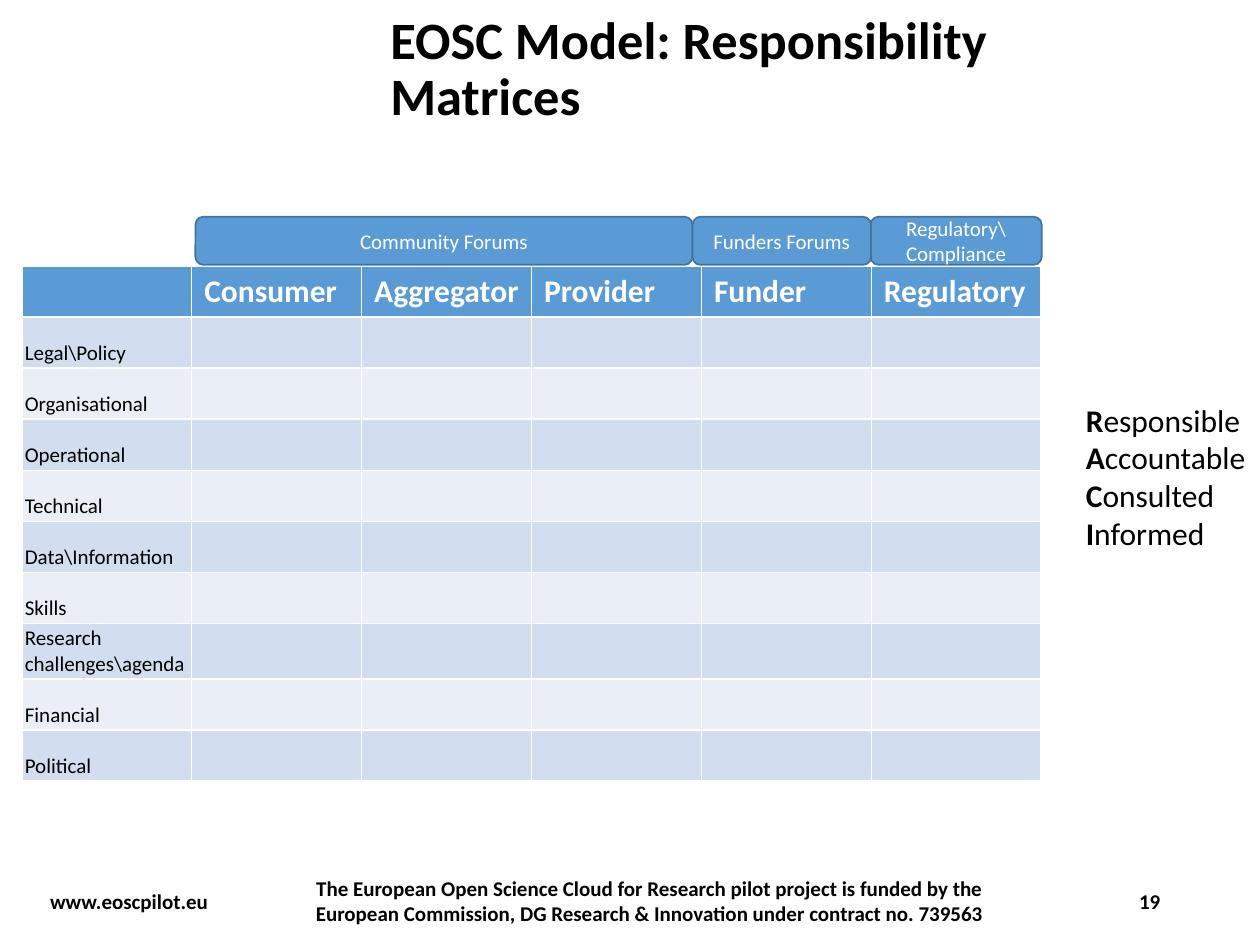
"""Build the EOSC responsibility matrix slide."""
from dataclasses import dataclass
from typing import NamedTuple

from pptx import Presentation
from pptx import util as u
from pptx.dml import color
from pptx.enum import shapes, text


@dataclass(frozen=True)
class Theme:
    font: str = "Calibri"
    ink: str = "000000"
    paper: str = "FFFFFF"
    accent: str = "5B9BD5"
    outline: str = "43739E"
    bands: tuple = ("D2DEEF", "EAEFF7")
    title: int = 30
    heading: int = 18
    body: int = 12


class Box(NamedTuple):
    left: float
    top: float
    width: float
    height: float

    def lengths(self) -> list:
        return [u.Cm(side) for side in self]


class Label(NamedTuple):
    wording: str
    box: Box
    align: text.PP_ALIGN = text.PP_ALIGN.LEFT
    size: int = 12


class Forum(NamedTuple):
    wording: str
    left: float
    width: float


THEME = Theme()
FORUM_TOP, FORUM_HEIGHT = 4.37, 0.97
FOOTER_TOP, FOOTER_HEIGHT = 17.65, 1.02
MATRIX = Box(0.44, 5.36, 20.55, 10.3)

LABELS = [
    Label("EOSC Model: Responsibility Matrices", Box(7.62, 0.38, 16.38, 2.08), size=THEME.title),
    Label("www.eoscpilot.eu", Box(0.76, FOOTER_TOP, 3.76, FOOTER_HEIGHT)),
    Label(
        "The European Open Science Cloud for Research pilot project is funded by the "
        "European Commission, DG Research & Innovation under contract no. 739563",
        Box(6.02, FOOTER_TOP, 14.15, FOOTER_HEIGHT),
        text.PP_ALIGN.CENTER,
    ),
    Label("19", Box(22.12, FOOTER_TOP, 1.52, FOOTER_HEIGHT), text.PP_ALIGN.RIGHT),
]
FORUMS = [
    Forum("Community Forums", 3.94, 10.02),
    Forum("Regulatory\\\nCompliance", 17.55, 3.45),
    Forum("Funders Forums", 13.96, 3.6),
]
ROLES = ["", "Consumer", "Aggregator", "Provider", "Funder", "Regulatory"]
AREAS = [
    "Legal\\Policy", "Organisational", "Operational", "Technical", "Data\\Information",
    "Skills", "Research challenges\\agenda", "Financial", "Political",
]
RACI = ["Responsible", "Accountable", "Consulted", "Informed"]


def rgb(code: str) -> color.RGBColor:
    return color.RGBColor.from_string(code)


def paint(part, code: str) -> None:
    part.fill.solid()
    part.fill.fore_color.rgb = rgb(code)


def style(font, size: int, code: str, bold: bool = False) -> None:
    font.name = THEME.font
    font.size = u.Pt(size)
    font.bold = bold
    font.color.rgb = rgb(code)


def write(frame, wording: str, size: int, code: str, bold: bool = False,
          align: text.PP_ALIGN = text.PP_ALIGN.LEFT) -> None:
    frame.text = wording
    for paragraph in frame.paragraphs:
        paragraph.alignment = align
        for run in paragraph.runs:
            style(run.font, size, code, bold)


def add_label(slide, label: Label) -> None:
    frame = slide.shapes.add_textbox(*label.box.lengths()).text_frame
    frame.word_wrap = True
    frame.vertical_anchor = text.MSO_ANCHOR.MIDDLE
    write(frame, label.wording, label.size, THEME.ink, True, label.align)
    if label.size == THEME.title:
        frame.paragraphs[0].line_spacing = 0.9


def add_forum(slide, forum: Forum) -> None:
    box = Box(forum.left, FORUM_TOP, forum.width, FORUM_HEIGHT)
    tab = slide.shapes.add_shape(shapes.MSO_SHAPE.ROUNDED_RECTANGLE, *box.lengths())
    tab.shadow.inherit = False
    paint(tab, THEME.accent)
    tab.line.color.rgb = rgb(THEME.outline)
    tab.line.width = u.Pt(1)
    tab.text_frame.vertical_anchor = text.MSO_ANCHOR.MIDDLE
    write(tab.text_frame, forum.wording, THEME.body, THEME.paper, align=text.PP_ALIGN.CENTER)


def add_matrix(slide) -> None:
    matrix = slide.shapes.add_table(len(AREAS) + 1, len(ROLES), *MATRIX.lengths()).table
    for column, role in enumerate(ROLES):
        heading = matrix.cell(0, column)
        paint(heading, THEME.accent)
        write(heading.text_frame, role, THEME.heading, THEME.paper, True)
    for row, area in enumerate(AREAS, start=1):
        for column in range(len(ROLES)):
            paint(matrix.cell(row, column), THEME.bands[(row - 1) % 2])
        area_cell = matrix.cell(row, 0)
        area_cell.vertical_anchor = text.MSO_ANCHOR.BOTTOM
        area_cell.margin_left = area_cell.margin_right = u.Cm(0.06)
        area_cell.margin_top = area_cell.margin_bottom = u.Cm(0.04)
        write(area_cell.text_frame, area, THEME.body, THEME.ink)


def add_raci(slide, box: Box) -> None:
    frame = slide.shapes.add_textbox(*box.lengths()).text_frame
    frame.word_wrap = False
    frame.auto_size = text.MSO_AUTO_SIZE.SHAPE_TO_FIT_TEXT
    frame.text = "\n".join(duty[0] for duty in RACI)
    for paragraph, duty in zip(frame.paragraphs, RACI):
        style(paragraph.runs[0].font, THEME.heading, THEME.ink, True)
        ending = paragraph.add_run()
        ending.text = duty[1:]
        style(ending.font, THEME.heading, THEME.ink)


def main() -> None:
    deck = Presentation()
    deck.slide_width, deck.slide_height = u.Cm(25.4), u.Cm(19.05)
    slide = deck.slides.add_slide(deck.slide_layouts[6])
    add_matrix(slide)
    for label in LABELS:
        add_label(slide, label)
    for forum in FORUMS:
        add_forum(slide, forum)
    add_raci(slide, Box(21.64, 7.95, 3.76, 3.33))
    deck.save("out.pptx")


if __name__ == "__main__":
    main()
